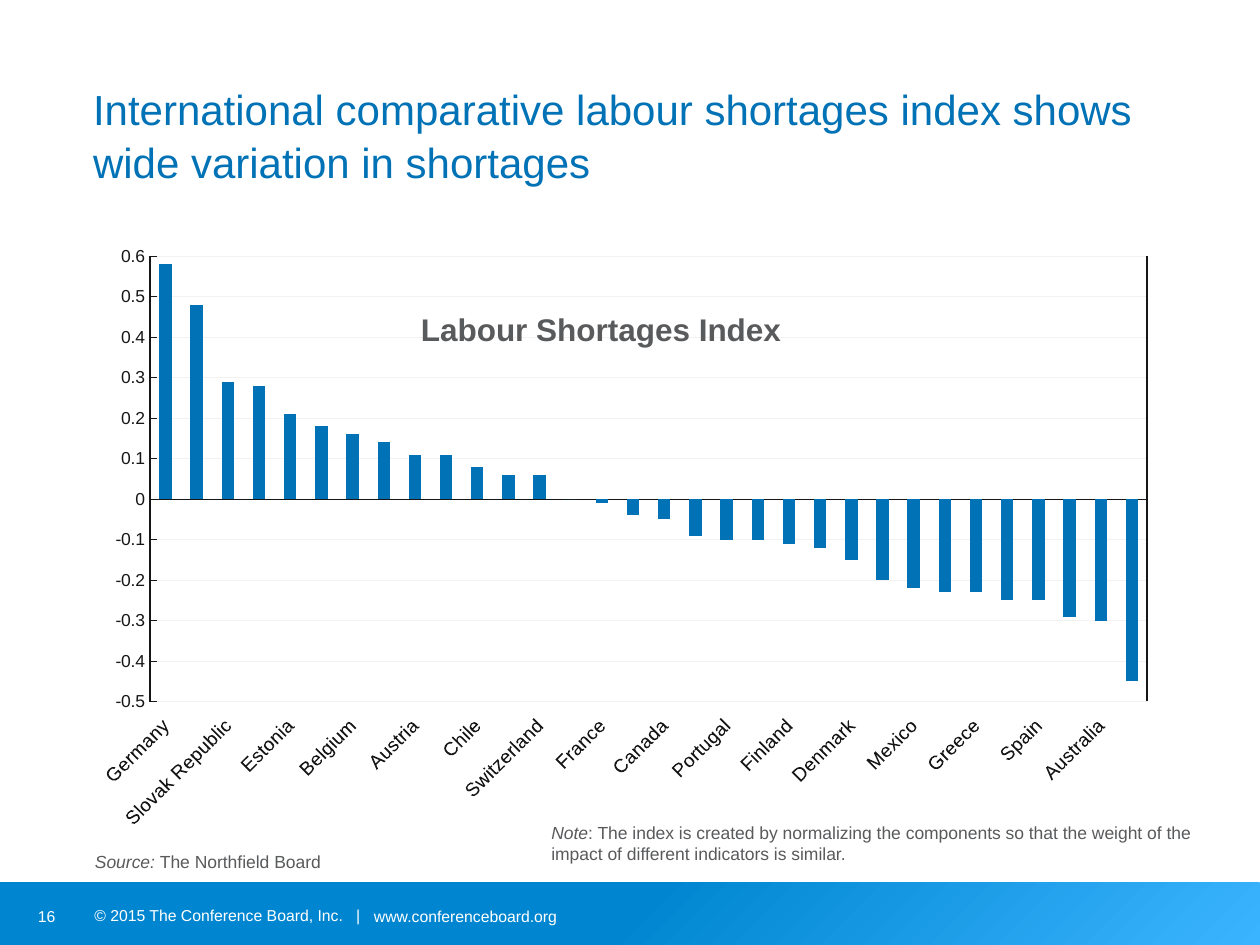
from dataclasses import dataclass

from lxml import etree
from pptx import Presentation
from pptx.chart.data import CategoryChartData
from pptx.dml.color import RGBColor
from pptx.enum.chart import XL_CHART_TYPE, XL_TICK_LABEL_POSITION, XL_TICK_MARK
from pptx.enum.shapes import MSO_CONNECTOR, MSO_SHAPE
from pptx.enum.text import MSO_ANCHOR
from pptx.oxml.ns import qn
from pptx.util import Emu, Pt

COLUMN = XL_CHART_TYPE.COLUMN_CLUSTERED
LABELS_LOW = XL_TICK_LABEL_POSITION.LOW
TICK_NONE, TICK_INSIDE = XL_TICK_MARK.NONE, XL_TICK_MARK.INSIDE
TOP, MIDDLE = MSO_ANCHOR.TOP, MSO_ANCHOR.MIDDLE
PX = 914400 / 126


@dataclass(frozen=True)
class Theme:
    font: str = "Arial"
    blue: str = "0072B5"
    gray: str = "595A5C"
    ink: str = "161616"
    grid: str = "F2F2F2"
    white: str = "FFFFFF"
    band_light: str = "3BB4FF"
    band_dark: str = "0086D0"
    title: int = 24
    chart_title: int = 18
    category: int = 11
    body: int = 10
    footer: int = 9
    hairline: float = 0.75


@dataclass(frozen=True)
class Frame:
    left: int
    top: int
    width: int
    height: int

    def emu(self) -> tuple:
        return tuple(px(n) for n in (self.left, self.top, self.width, self.height))


@dataclass(frozen=True)
class Label:
    frame: Frame
    spans: tuple  # (text, italic) pairs
    size: int
    color: str
    anchor: MSO_ANCHOR = TOP
    padded: bool = False
    spacing: float = 1.0


THEME = Theme()

LABELS = (
    Label(Frame(374, 891, 205, 50), (("www.conferenceboard.org", False),),
          THEME.footer, THEME.white, MIDDLE),
    Label(Frame(82, 893, 318, 44), (("© 2015 The Conference Board, Inc.   |", False),),
          THEME.footer, THEME.white, MIDDLE, padded=True),
    Label(Frame(38, 891, 53, 50), (("16", False),), THEME.footer, THEME.white, MIDDLE),
    Label(Frame(93, 81, 1104, 115),
          (("International comparative labour shortages index shows "
            "wide variation in shortages", False),),
          THEME.title, THEME.blue, spacing=1.05),
    Label(Frame(95, 851, 440, 24), (("Source: ", True), ("The Northfield Board", False)),
          THEME.body, THEME.gray),
    Label(Frame(539, 816, 690, 55),
          (("Note", True),
           (": The index is created by normalizing the components so that the weight "
            "of the impact of different indicators is similar.", False)),
          THEME.body, THEME.gray, padded=True),
)

INDEX = {
    "Germany": 0.58, "Hungary": 0.48, "Slovak Republic": 0.29, "Japan": 0.28,
    "Estonia": 0.21, "Poland": 0.18, "Belgium": 0.16, "Czech Republic": 0.14,
    "Austria": 0.11, "Italy": 0.11, "Chile": 0.08, "New Zealand": 0.06,
    "Switzerland": 0.06, "United Kingdom": 0, "France": -0.01, "United States": -0.04,
    "Canada": -0.05, "Korea": -0.09, "Portugal": -0.1, "Netherlands": -0.1,
    "Finland": -0.11, "Ireland": -0.12, "Denmark": -0.15, "Luxembourg": -0.2,
    "Mexico": -0.22, "Turkey": -0.23, "Greece": -0.23, "Sweden": -0.25,
    "Spain": -0.25, "Norway": -0.29, "Australia": -0.3, "Iceland": -0.45,
}


def px(count: int) -> Emu:
    return Emu(round(count * PX))


def rgb(value: str) -> RGBColor:
    return RGBColor.from_string(value)


def set_font(font, *, size: int, color: str, bold: bool = False, italic: bool = False) -> None:
    font.name, font.size = THEME.font, Pt(size)
    font.bold, font.italic = bold, italic
    font.color.rgb = rgb(color)


def set_line(line, color: str) -> None:
    line.color.rgb = rgb(color)
    line.width = Pt(THEME.hairline)


def add_label(slide, label: Label) -> None:
    frame = slide.shapes.add_textbox(*label.frame.emu()).text_frame
    frame.word_wrap = True
    frame.vertical_anchor = label.anchor
    if not label.padded:
        frame.margin_left = frame.margin_right = frame.margin_top = frame.margin_bottom = 0
    para = frame.paragraphs[0]
    para.line_spacing = label.spacing
    for text, italic in label.spans:
        span = para.add_run()
        span.text = text
        set_font(span.font, size=label.size, color=label.color, italic=italic)


def add_band(slide, frame: Frame) -> None:
    band = slide.shapes.add_shape(MSO_SHAPE.RECTANGLE, *frame.emu())
    band.shadow.inherit = False
    band.line.fill.background()
    band.fill.gradient()
    band.fill.gradient_angle = 135
    stops = ((0, THEME.band_light), (0.5, THEME.band_dark))
    for stop, (position, color) in zip(band.fill.gradient_stops, stops):
        stop.position = position
        stop.color.rgb = rgb(color)


def set_layout(parent, **values) -> None:
    """Give a chart part a manual layout, in fractions of the chart."""
    for old in parent.findall(qn("c:layout")):
        parent.remove(old)
    layout = etree.Element(qn("c:layout"))
    manual = etree.SubElement(layout, qn("c:manualLayout"))
    for name, value in values.items():
        etree.SubElement(manual, qn(f"c:{name}")).set("val", str(value))
    parent.insert(1 if parent.find(qn("c:tx")) is not None else 0, layout)


def add_index_chart(slide, frame: Frame) -> None:
    data = CategoryChartData()
    data.categories = list(INDEX)
    data.add_series("Series 1", list(INDEX.values()))
    chart = slide.shapes.add_chart(COLUMN, *frame.emu(), data).chart
    chart.has_legend = False
    set_font(chart.font, size=THEME.body, color=THEME.ink)

    # Title laid over the plot
    chart.has_title = True
    title = chart.chart_title
    title.text_frame.text = "Labour Shortages Index"
    set_font(title.text_frame.paragraphs[0].runs[0].font,
             size=THEME.chart_title, color=THEME.gray, bold=True)
    title_xml = title.format and chart.element.find(".//" + qn("c:title"))
    set_layout(title_xml, xMode="edge", yMode="edge", x=0.3, y=0.14)
    title_xml.find(qn("c:overlay")).set("val", "1")
    set_layout(chart.element.find(".//" + qn("c:plotArea")), layoutTarget="inner",
               xMode="edge", yMode="edge", x=0.053, y=0.063, w=0.929, h=0.733)

    # Columns
    plot = chart.plots[0]
    plot.gap_width = 150
    plot.vary_by_categories = False
    series = plot.series[0]
    series.invert_if_negative = False
    series.format.fill.solid()
    series.format.fill.fore_color.rgb = rgb(THEME.blue)

    # Axes
    countries, scale = chart.category_axis, chart.value_axis
    for axis, tick, size in ((countries, TICK_NONE, THEME.category),
                             (scale, TICK_INSIDE, THEME.body)):
        axis.major_tick_mark, axis.minor_tick_mark = tick, TICK_NONE
        set_line(axis.format.line, THEME.ink)
        set_font(axis.tick_labels.font, size=size, color=THEME.ink)
    countries.tick_label_position = LABELS_LOW
    countries_xml = chart.element.find(".//" + qn("c:catAx"))
    countries_xml.find(".//" + qn("a:bodyPr")).set("rot", "-2700000")
    scale.minimum_scale, scale.maximum_scale, scale.major_unit = -0.5, 0.6, 0.1
    scale.has_major_gridlines = True
    set_line(scale.major_gridlines.format.line, THEME.grid)


def add_rule(slide, x: int, top: int, bottom: int) -> None:
    rule = slide.shapes.add_connector(MSO_CONNECTOR.STRAIGHT, px(x), px(top), px(x), px(bottom))
    set_line(rule.line, THEME.ink)
    etree.SubElement(rule.element.spPr, qn("a:effectLst"))


def main() -> None:
    deck = Presentation()
    deck.slide_width, deck.slide_height = px(1260), px(945)
    page = deck.slides.add_slide(deck.slide_layouts[6])
    add_band(page, Frame(0, 883, 1260, 62))
    add_index_chart(page, Frame(93, 218, 1074, 611))
    add_rule(page, 1147, 256, 701)  # right edge of the plot
    for label in LABELS:
        add_label(page, label)
    deck.save("out.pptx")


if __name__ == "__main__":
    main()
